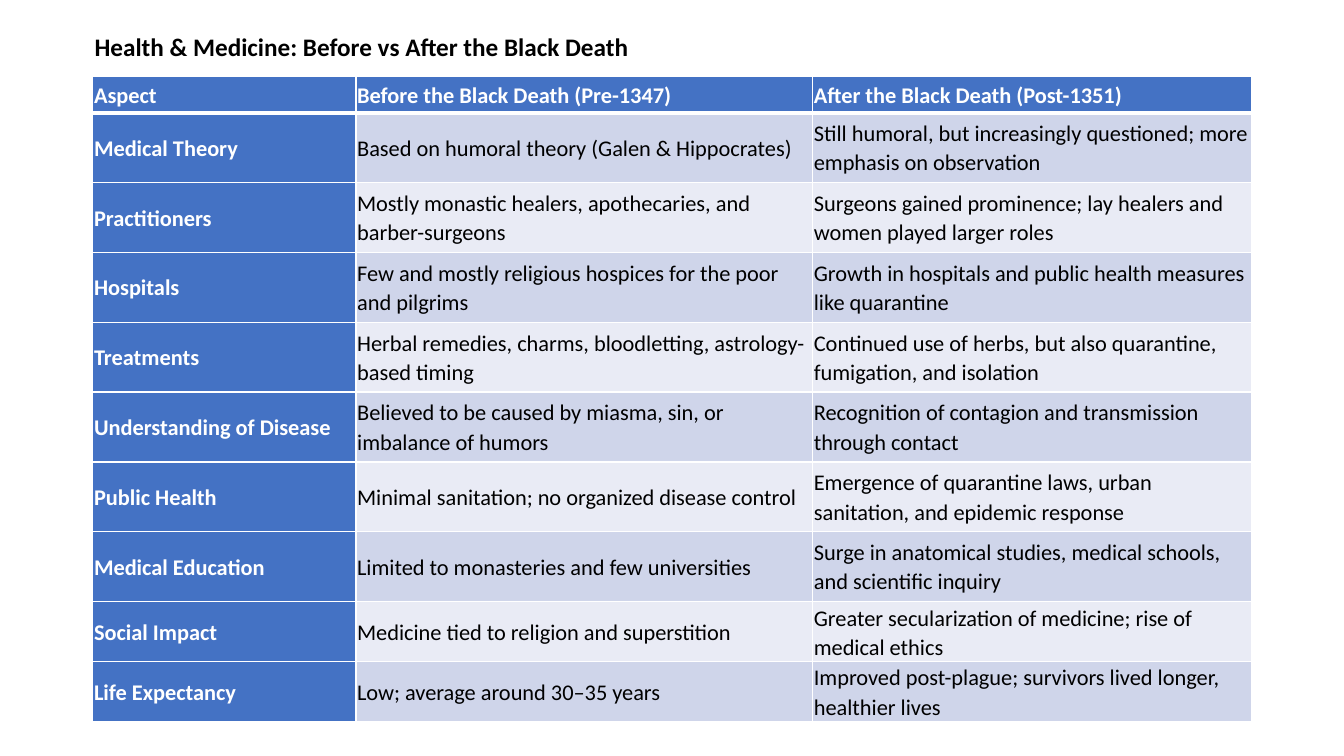
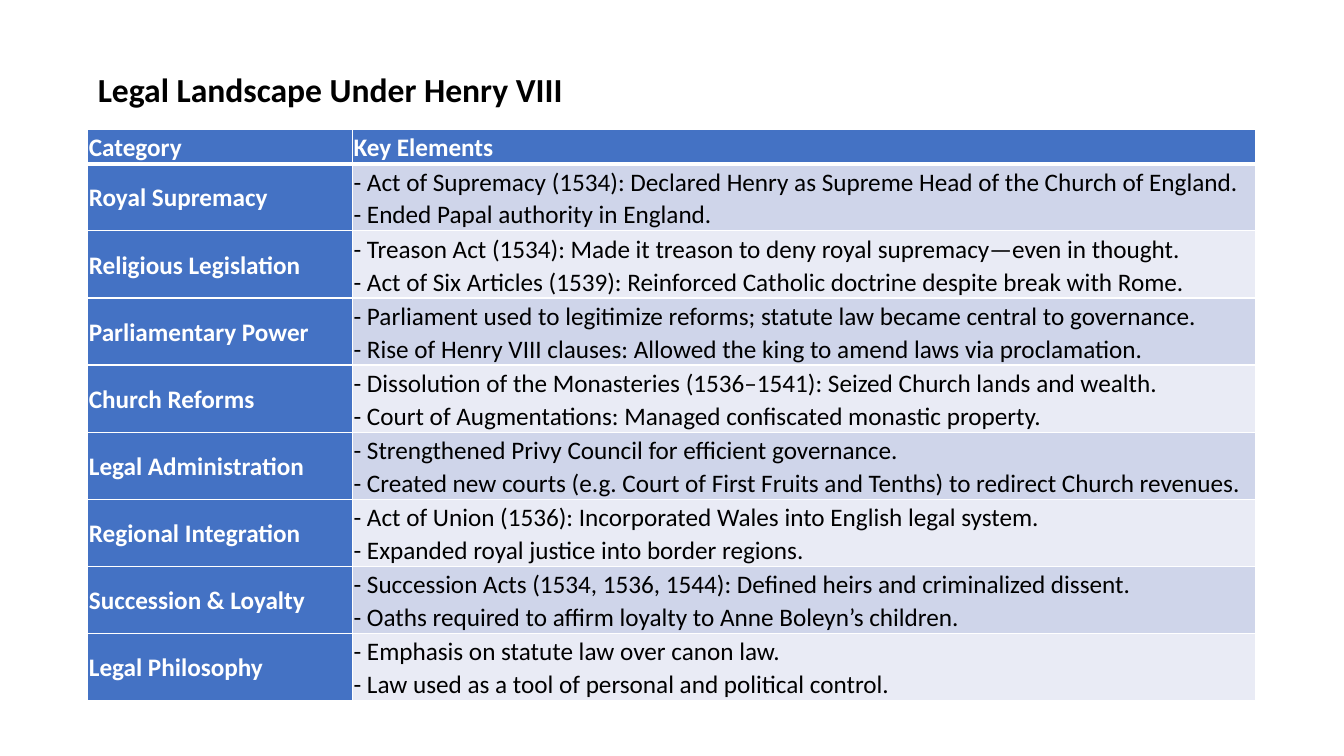
import dataclasses

import lxml.etree
import pptx
import pptx.dml.color
import pptx.enum.text
import pptx.oxml.ns
import pptx.util

Cm = pptx.util.Cm
Pt = pptx.util.Pt
qn = pptx.oxml.ns.qn


@dataclasses.dataclass(frozen=True)
class Theme:
    font: str = "Calibri"
    text: str = "000000"
    light: str = "FFFFFF"
    header: str = "4472C4"
    bands: tuple = ("CFD5EA", "E9EBF5")
    title_small: int = 18
    title_large: int = 24
    table_small: int = 16
    table_large: int = 18
    border: int = 1
    header_border: int = 3
    line_spacing: float = 1.07
    space_after: int = 8
    cell_margin: float = 0.03


class Deck:
    def __init__(self, theme):
        self.theme = theme
        self.prs = pptx.Presentation()
        self.prs.slide_width = Cm(33.87)
        self.prs.slide_height = Cm(19.05)
        self.slide = None

    def new_slide(self):
        self.slide = self.prs.slides.add_slide(self.prs.slide_layouts[5])

    def style(self, p, size, color, bold):
        for r in p.runs:
            r.font.name = self.theme.font
            r.font.size = Pt(size)
            r.font.bold = bold
            r.font.color.rgb = pptx.dml.color.RGBColor.from_string(color)

    def title(self, text, left, top, width, height, size):
        sp = self.slide.shapes.title
        sp.left, sp.top, sp.width, sp.height = map(Cm, (left, top, width, height))
        tf = sp.text_frame
        tf.text = text
        tf.word_wrap = True
        tf.auto_size = pptx.enum.text.MSO_AUTO_SIZE.SHAPE_TO_FIT_TEXT
        tf.vertical_anchor = pptx.enum.text.MSO_ANCHOR.TOP
        p = tf.paragraphs[0]
        p.alignment = pptx.enum.text.PP_ALIGN.LEFT
        self.style(p, size, self.theme.text, True)

    def borders(self, cell, top, bottom):
        tcPr = cell._tc.get_or_add_tcPr()
        side = self.theme.border
        for tag, width in (("lnL", side), ("lnR", side), ("lnT", top), ("lnB", bottom)):
            ln = lxml.etree.SubElement(tcPr, qn(f"a:{tag}"), w=str(Pt(width)))
            fill = lxml.etree.SubElement(ln, qn("a:solidFill"))
            lxml.etree.SubElement(fill, qn("a:srgbClr"), val=self.theme.light)

    def cell(self, cell, text, row, col, size):
        th = self.theme
        heading = row == 0 or col == 0
        self.borders(
            cell,
            th.header_border if row == 1 else th.border,
            th.header_border if row == 0 else th.border,
        )
        color = th.header if heading else th.bands[(row - 1) % 2]
        cell.fill.solid()
        cell.fill.fore_color.rgb = pptx.dml.color.RGBColor.from_string(color)
        cell.margin_left = cell.margin_right = Cm(th.cell_margin)
        cell.margin_top = cell.margin_bottom = Cm(th.cell_margin)
        cell.vertical_anchor = pptx.enum.text.MSO_ANCHOR.MIDDLE
        p = cell.text_frame.paragraphs[0]
        p.text = text
        p.line_spacing = th.line_spacing
        p.space_after = Pt(th.space_after)
        self.style(p, size, th.light if heading else th.text, heading)

    def table(self, rows, left, top, widths, heights, size):
        frame = self.slide.shapes.add_table(
            len(rows), len(widths), Cm(left), Cm(top), Cm(sum(widths)), Cm(sum(heights))
        )
        table = frame.table
        for column, width in zip(table.columns, widths):
            column.width = Cm(width)
        for i, (row, height) in enumerate(zip(rows, heights)):
            table.rows[i].height = Cm(height)
            for j, text in enumerate(row):
                self.cell(table.cell(i, j), text, i, j, size)


MEDICINE = [
    ("Aspect", "Before the Black Death (Pre-1347)", "After the Black Death (Post-1351)"),
    ("Medical Theory", "Based on humoral theory (Galen & Hippocrates)",
     "Still humoral, but increasingly questioned; more emphasis on observation"),
    ("Practitioners", "Mostly monastic healers, apothecaries, and barber-surgeons",
     "Surgeons gained prominence; lay healers and women played larger roles"),
    ("Hospitals", "Few and mostly religious hospices for the poor and pilgrims",
     "Growth in hospitals and public health measures like quarantine"),
    ("Treatments", "Herbal remedies, charms, bloodletting, astrology-based timing",
     "Continued use of herbs, but also quarantine, fumigation, and isolation"),
    ("Understanding of Disease", "Believed to be caused by miasma, sin, or imbalance of humors",
     "Recognition of contagion and transmission through contact"),
    ("Public Health", "Minimal sanitation; no organized disease control",
     "Emergence of quarantine laws, urban sanitation, and epidemic response"),
    ("Medical Education", "Limited to monasteries and few universities",
     "Surge in anatomical studies, medical schools, and scientific inquiry"),
    ("Social Impact", "Medicine tied to religion and superstition",
     "Greater secularization of medicine; rise of medical ethics"),
    ("Life Expectancy", "Low; average around 30–35 years",
     "Improved post-plague; survivors lived longer, healthier lives"),
]

LAW = [
    ("Category", "Key Elements"),
    ("Royal Supremacy",
     "- Act of Supremacy (1534): Declared Henry as Supreme Head of the Church of England.\n"
     "- Ended Papal authority in England."),
    ("Religious Legislation",
     "- Treason Act (1534): Made it treason to deny royal supremacy—even in thought.\n"
     "- Act of Six Articles (1539): Reinforced Catholic doctrine despite break with Rome."),
    ("Parliamentary Power",
     "- Parliament used to legitimize reforms; statute law became central to governance.\n"
     "- Rise of Henry VIII clauses: Allowed the king to amend laws via proclamation."),
    ("Church Reforms",
     "- Dissolution of the Monasteries (1536–1541): Seized Church lands and wealth.\n"
     "- Court of Augmentations: Managed confiscated monastic property."),
    ("Legal Administration",
     "- Strengthened Privy Council for efficient governance.\n"
     "- Created new courts (e.g. Court of First Fruits and Tenths) to redirect Church revenues."),
    ("Regional Integration",
     "- Act of Union (1536): Incorporated Wales into English legal system.\n"
     "- Expanded royal justice into border regions."),
    ("Succession & Loyalty",
     "- Succession Acts (1534, 1536, 1544): Defined heirs and criminalized dissent.\n"
     "- Oaths required to affirm loyalty to Anne Boleyn’s children."),
    ("Legal Philosophy",
     "- Emphasis on statute law over canon law.\n"
     "- Law used as a tool of personal and political control."),
]


def main():
    theme = Theme()
    deck = Deck(theme)

    deck.new_slide()
    deck.title("Health & Medicine: Before vs After the Black Death",
               2.13, 0.66, 16.03, 1.02, theme.title_small)
    deck.table(MEDICINE, 2.34, 1.93, (6.63, 11.51, 11.07),
               [0.91] + [1.76] * 7 + [1.5] * 2, theme.table_small)

    deck.new_slide()
    deck.title("Legal Landscape Under Henry VIII",
               2.21, 1.6, 16.41, 1.27, theme.title_large)
    deck.table(LAW, 2.21, 3.25, (6.67, 22.77), [0.86] + [1.68] * 8, theme.table_large)

    deck.prs.save("out.pptx")


if __name__ == "__main__":
    main()
